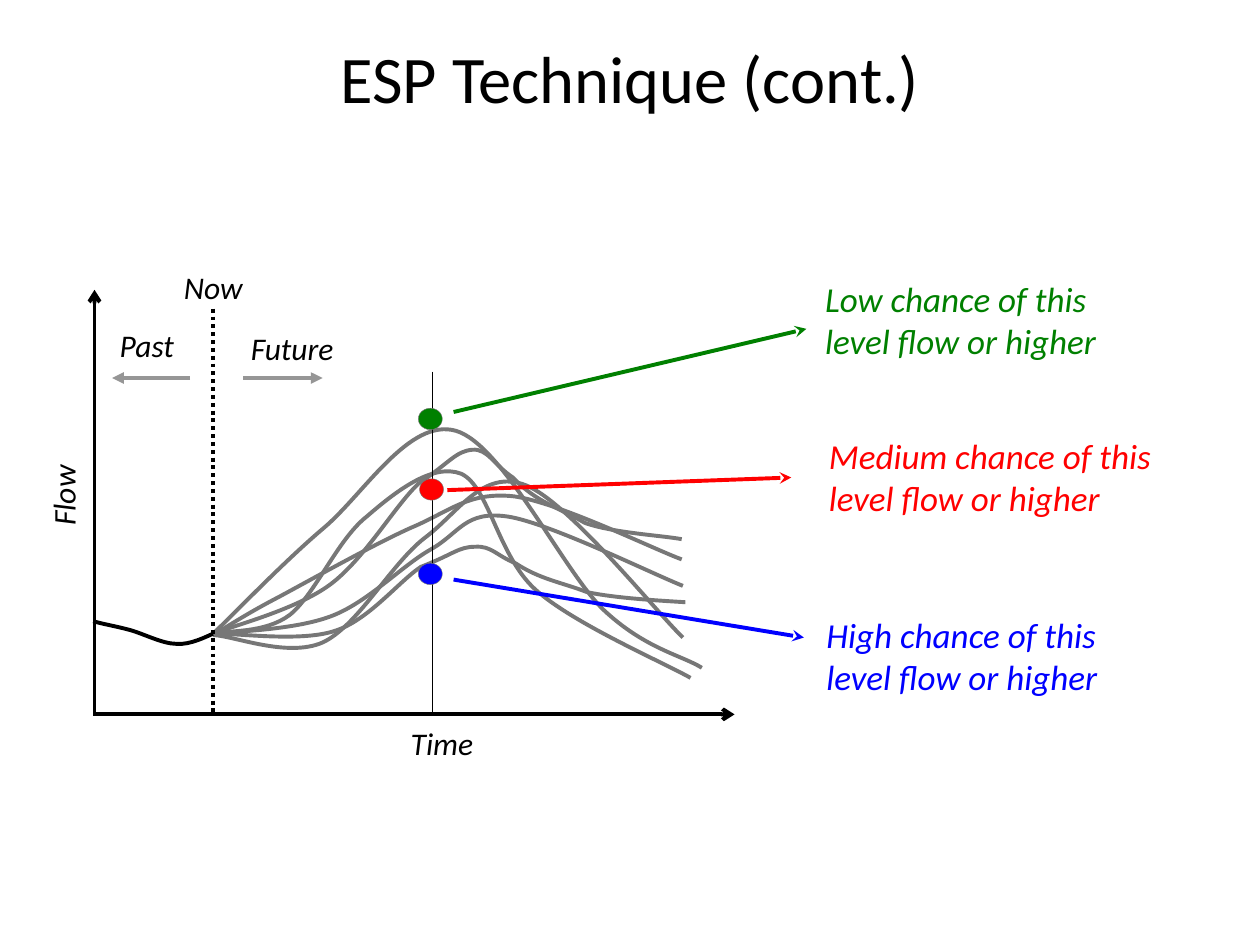
from lxml.etree import SubElement
from pptx import Presentation
from pptx.dml.color import RGBColor
from pptx.enum.dml import MSO_LINE
from pptx.enum.shapes import MSO_CONNECTOR, MSO_SHAPE
from pptx.enum.text import MSO_ANCHOR, PP_ALIGN
from pptx.oxml.ns import qn
from pptx.util import Pt

EMU_PER_PX = 9144
BLACK, CURVE_GRAY, ARROW_GRAY = "000000", "777777", "969696"

ENSEMBLE = [
    [(168, 503), (184, 502), (237, 510), (265, 501), (292, 493), (316, 462), (334, 450),
     (360, 440), (364, 434), (377, 434), (390, 433), (394, 441), (409, 447),
     (429, 460), (445, 462), (466, 470), (489, 475), (528, 477), (544, 478)],
    [(169, 503), (184, 497), (235, 484), (262, 464), (289, 444), (313, 402), (332, 384),
     (357, 367), (362, 358), (375, 357), (387, 356), (392, 369), (407, 379),
     (426, 399), (442, 402), (464, 415), (486, 423), (525, 425), (541, 428)],
    [(169, 503), (184, 489), (225, 446), (257, 419), (289, 392), (325, 331), (362, 342),
     (399, 353), (447, 453), (479, 484), (512, 515), (541, 520), (557, 530)],
    [(542, 506), (521, 486), (451, 398), (417, 385), (383, 372), (364, 407), (337, 427),
     (310, 448), (284, 497), (256, 510), (228, 522), (187, 505), (169, 504)],
    [(548, 538), (527, 526), (455, 495), (425, 468), (395, 441), (388, 386), (366, 376),
     (343, 367), (313, 391), (291, 410), (268, 428), (250, 472), (230, 488),
     (210, 503), (181, 500), (169, 503)],
    [(542, 465), (519, 456), (436, 415), (403, 410), (369, 405), (365, 423), (342, 436),
     (319, 449), (292, 478), (263, 489), (234, 500), (188, 501), (169, 503)],
    [(541, 444), (519, 436), (444, 399), (408, 394), (372, 390), (357, 406), (326, 419),
     (295, 433), (247, 460), (221, 474), (194, 488), (178, 499), (169, 504)],
]
OBSERVED = [(169, 503), (164, 505), (151, 512), (140, 511), (129, 511), (114, 503), (103, 500),
            (92, 497), (80, 495), (74, 493)]

CALLOUTS = [
    ("Low", "008000", (645, 215, 257, 77), (360, 327), (640, 261), (332, 324)),
    ("High", "0000FF", (646, 482, 259, 77), (360, 460), (638, 506), (332, 447)),
    ("Medium", "FF0000", (648, 340, 294, 110), (355, 389), (628, 379), (333, 380)),
]


def px(length):
    return length * EMU_PER_PX


def color(value):
    return RGBColor.from_string(value)


class Sketch:
    """Draws the elements of a hydrograph in one style on the current slide."""

    font_name = "Calibri"
    stroke = 2.25

    def __init__(self, slide):
        self.slide = slide

    def text(self, words, left, top, width, height, size=18, hue=BLACK, italic=True,
             inset=(0, 0), wrap=True, align=PP_ALIGN.LEFT, anchor=MSO_ANCHOR.TOP, rotation=0):
        box = self.slide.shapes.add_textbox(px(left), px(top), px(width), px(height))
        box.rotation = rotation
        frame = box.text_frame
        frame.text = words
        frame.word_wrap = wrap
        frame.vertical_anchor = anchor
        frame.margin_left = frame.margin_right = px(inset[0])
        frame.margin_top = frame.margin_bottom = px(inset[1])
        paragraph = frame.paragraphs[0]
        paragraph.alignment = align
        font = paragraph.runs[0].font
        font.name, font.size, font.italic = self.font_name, Pt(size), italic
        font.color.rgb = color(hue)

    def line(self, start, end, hue=BLACK, width=stroke, arrow=None, dash=None):
        connector = self.slide.shapes.add_connector(
            MSO_CONNECTOR.STRAIGHT, *map(px, (*start, *end)))
        connector.line.color.rgb = color(hue)
        connector.line.width = Pt(width)
        if dash:
            connector.line.dash_style = dash
        properties = connector._element.spPr
        if arrow:
            SubElement(properties.find(qn("a:ln")), qn("a:tailEnd"), type=arrow)
        SubElement(properties, qn("a:effectLst"))

    def curve(self, points, hue):
        builder = self.slide.shapes.build_freeform(*points[0], scale=EMU_PER_PX)
        builder.add_line_segments(points[1:], close=False)
        shape = builder.convert_to_shape()
        shape.shadow.inherit = False
        shape.fill.background()
        shape.line.color.rgb = color(hue)
        shape.line.width = Pt(self.stroke)
        outline = next(shape._element.iter(qn("a:path")))
        segments = outline.findall(qn("a:lnTo"))
        for first in range(0, len(segments), 3):
            bezier = SubElement(outline, qn("a:cubicBezTo"))
            for segment in segments[first:first + 3]:
                bezier.append(segment[0])
                outline.remove(segment)

    def dot(self, left, top, hue):
        shape = self.slide.shapes.add_shape(MSO_SHAPE.OVAL, *map(px, (left, top, 19, 17)))
        shape.shadow.inherit = False
        shape.fill.solid()
        shape.fill.fore_color.rgb = color(hue)
        shape.line.color.rgb = color(CURVE_GRAY)
        shape.line.width = Pt(0.25)


def main():
    deck = Presentation()
    deck.slide_width, deck.slide_height = px(1000), px(750)
    sketch = Sketch(deck.slides.add_slide(deck.slide_layouts[6]))

    sketch.text("ESP Technique (cont.)", 50, 23, 900, 76, size=38, italic=False,
                inset=(10, 5), align=PP_ALIGN.CENTER, anchor=MSO_ANCHOR.MIDDLE)
    sketch.text("Flow", 9, 366, 82, 40, inset=(10, 5), rotation=270)
    sketch.line((75, 566), (75, 230), arrow="arrow")
    sketch.line((74, 567), (583, 567), arrow="arrow")
    sketch.text("Time", 326, 575, 116, 30)

    for trace in ENSEMBLE:
        sketch.curve(trace, CURVE_GRAY)

    sketch.line((169, 245), (169, 568), dash=MSO_LINE.ROUND_DOT)
    for period, left, top, width in (("Future", 199, 261, 72), ("Now", 146, 213, 50),
                                     ("Past", 95, 259, 50)):
        sketch.text(period, left, top, width, 30, wrap=False)
    for start, end in ((151, 89), (193, 256)):
        sketch.line((start, 300), (end, 300), ARROW_GRAY, arrow="triangle")

    sketch.curve(OBSERVED, BLACK)
    sketch.line((343, 295), (343, 568), width=0.75)

    for chance, hue, box, start, end, dot in CALLOUTS:
        sketch.line(start, end, hue, arrow="stealth")
        sketch.text(f"{chance} chance of this level flow or higher", *box,
                    size=20, hue=hue, inset=(10, 5))
        sketch.dot(*dot, hue)

    deck.save("out.pptx")


if __name__ == "__main__":
    main()
